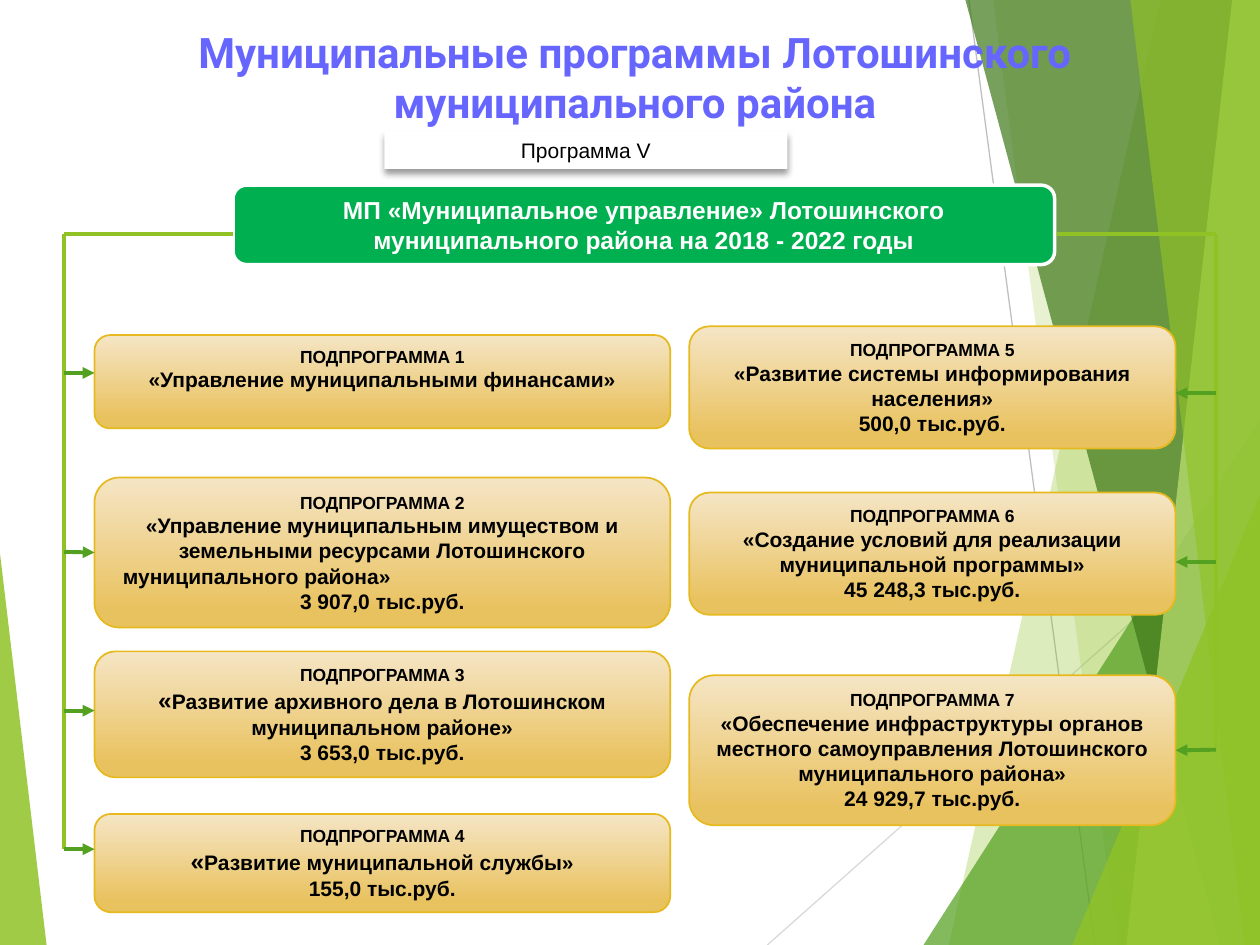
from lxml import etree
from pptx import Presentation, util as u
from pptx.dml.color import RGBColor
from pptx.enum import shapes as s, text as t
from pptx.oxml import parse_xml
from pptx.oxml.ns import qn

NS = 'xmlns:a="http://schemas.openxmlformats.org/drawingml/2006/main"'
cell = u.Inches(0.1)
cols, rows = 100, 75


def tint(fill, hue, alpha=100):
    fill.solid()
    fill.fore_color.rgb = RGBColor.from_string(hue)
    if alpha < 100:
        node = fill._xPr.find(qn("a:solidFill"))[0]
        etree.SubElement(node, qn("a:alpha")).set("val", str(alpha * 1000))


def write(par, text, size=12, hue="000000", bold=True, font="Arial", align="CENTER"):
    par.alignment = t.PP_ALIGN[align]
    run = par.add_run()
    run.text = text
    run.font.size, run.font.bold, run.font.name = u.Pt(size), bold, font
    tint(run.font.fill, hue)


deck = Presentation()
deck.slide_width, deck.slide_height = cols * cell, rows * cell
slide = deck.slides.add_slide(deck.slide_layouts[5])
draw = slide.shapes

back_lines = [
    (76.9, 0, 86.9, rows, "BFBFBF", 0.75, False),
    (cols, 40.3, 60.9, rows, "D9D9D9", 0.75, False),
]
wings = [
    ("90C226", 30, 92.1, 75.3),
    ("90C226", 20, 78.8, 88.7),
    ("54A021", 72, 73.3, 33.3, 26.7, 41.7, 1),
    ("3F7819", 70, 76.6, 96.8),
    ("C0E474", 70, 97.8, 89.4),
    ("90C226", 65, 89.7, 98.8),
    ("90C226", 80, 85.1, 39.3, 14.9, 35.7, 1),
    ("90C226", 85, 0, 43.9, 3.7, 31.1, 0),
]
left, right, low, high = 5.1, 96.5, 67.4, 18.6
lcol, lwide, rcol, rwide = 7.5, 45.7, 54.7, 38.6
redge = rcol + rwide
cards = [
    (1, lcol, 26.6, lwide, 7.4, 29.6, ["«Управление муниципальными финансами»"]),
    (2, lcol, 37.9, lwide, 11.9, 43.8,
     ["«Управление муниципальным имуществом и земельными ресурсами Лотошинского",
      "муниципального района»", "3 907,0 тыс.руб."]),
    (3, lcol, 51.7, lwide, 10, 56.4,
     ["«Развитие архивного дела в Лотошинском муниципальном районе»", "3 653,0 тыс.руб."]),
    (4, lcol, 64.6, lwide, 7.8, low, ["«Развитие муниципальной службы»", "155,0 тыс.руб."]),
    (5, rcol, 25.9, rwide, 9.7, 31.2,
     ["«Развитие системы информирования населения»", "500,0 тыс.руб."]),
    (6, rcol, 39.1, rwide, 9.7, 44.6,
     ["«Создание условий для реализации муниципальной программы»", "45 248,3 тыс.руб."]),
    (7, rcol, 53.6, rwide, 11.9, 59.5,
     ["«Обеспечение инфраструктуры органов местного самоуправления Лотошинского "
      "муниципального района»", "24 929,7 тыс.руб."]),
]
front_lines = [
    (left, high, left, low, "90C226", 2.25, False),
    (18.5, high, left, high, "90C226", 2.25, False),
    (right, 59.5, right, high, "90C226", 2.25, False),
    (83.9, high, right, high, "90C226", 2.25, False),
]
for num, x, y, wide, tall, mid, body in cards:
    ends = (lcol, left) if x == lcol else (redge, right)
    front_lines.append((ends[0], mid, ends[1], mid, "54A021", 2.25, True))

lines = []
for *ends, hue, width, arrow in back_lines + front_lines:
    line = draw.add_connector(s.MSO_CONNECTOR.STRAIGHT, *[int(v * cell) for v in ends])
    tint(line.line.fill, hue)
    line.line.width = u.Pt(width)
    if arrow:
        etree.SubElement(line.line._get_or_add_ln(), qn("a:headEnd")).set("type", "triangle")
    etree.SubElement(line._element.spPr, qn("a:effectLst"))
    lines.append(line)

for hue, alpha, *spot in wings:
    if len(spot) == 2:
        top, foot = spot
        edge = [(cols, -0.1), (cols, rows), (foot, rows)]
        pen = draw.build_freeform(int(top * cell), int(-0.1 * cell))
        pen.add_line_segments([(int(x * cell), int(y * cell)) for x, y in edge])
        wing = pen.convert_to_shape()
    else:
        *box, peak = spot
        wing = draw.add_shape(s.MSO_SHAPE.ISOSCELES_TRIANGLE, *[int(v * cell) for v in box])
        wing.adjustments[0] = peak
    wing.shadow.inherit = False
    wing.line.fill.background()
    tint(wing.fill, hue, alpha)

title = draw.title
title.left, title.top, title.width, title.height = [int(v * cell) for v in (5.5, 1.6, 89.8, 8.6)]
title.text_frame.vertical_anchor = t.MSO_ANCHOR.TOP
title.text_frame.auto_size = t.MSO_AUTO_SIZE.NONE
write(title.text_frame.paragraphs[0], "Муниципальные программы Лотошинского муниципального района",
      size=24, hue="6666FF", font="Roboto")
draw._spTree.append(title._element)

head = draw.add_shape(s.MSO_SHAPE.ROUNDED_RECTANGLE, *[int(v * cell) for v in (18.5, 14.7, 65.2, 6.3)])
head.shadow.inherit = False
tint(head.fill, "00B050")
tint(head.line.fill, "FFFFFF")
head.line.width = u.Pt(2)
write(head.text_frame.paragraphs[0],
      "МП «Муниципальное управление» Лотошинского муниципального района на 2018 - 2022 годы",
      size=14, hue="FFFFFF")

label = draw.add_shape(s.MSO_SHAPE.RECTANGLE, *[int(v * cell) for v in (30.5, 10.4, 32, 3)])
tint(label.fill, "FFFFFF")
label.line.fill.background()
label._element.spPr.append(parse_xml(
    f'<a:effectLst {NS}><a:outerShdw blurRad="50800" dist="38100" dir="5400000" rotWithShape="0">'
    '<a:srgbClr val="000000"><a:alpha val="40000"/></a:srgbClr></a:outerShdw></a:effectLst>'))
write(label.text_frame.paragraphs[0], "Программа V", bold=False)

for line in lines[len(back_lines):]:
    draw._spTree.append(line._element)

links = lines[len(back_lines) + 4:]
for (num, x, y, wide, tall, mid, body), link in zip(cards, links):
    card = draw.add_shape(s.MSO_SHAPE.ROUNDED_RECTANGLE, *[int(v * cell) for v in (x, y, wide, tall)])
    card.shadow.inherit = False
    card.fill.gradient()
    card.fill.gradient_angle = 270
    for stop, spot, hue in zip(card.fill.gradient_stops, (0, 0.88), ("F5E5C5", "E9C260")):
        stop.position = spot
        stop.color.rgb = RGBColor.from_string(hue)
    tint(card.line.fill, "E6B91E")
    card.line.width = u.Pt(1)
    frame = card.text_frame
    frame.vertical_anchor = t.MSO_ANCHOR.TOP if num == 1 else t.MSO_ANCHOR.MIDDLE
    write(frame.paragraphs[0], f"ПОДПРОГРАММА {num}", size=10)
    for text in body:
        par = frame.add_paragraph()
        if num in (3, 4) and text[0] == "«":
            write(par, "«", size=14)
            text = text[1:]
        loose = text.startswith("муниципального")
        write(par, text, align="LEFT" if loose else "CENTER")
        if loose:
            par._p.get_or_add_pPr().set("marL", str(int(0.7 * cell)))
    if abs(y + tall / 2 - mid) < 0.1:
        link.begin_connect(card, 1 if x == lcol else 3)
    draw._spTree.append(link._element)

deck.save("out.pptx")
